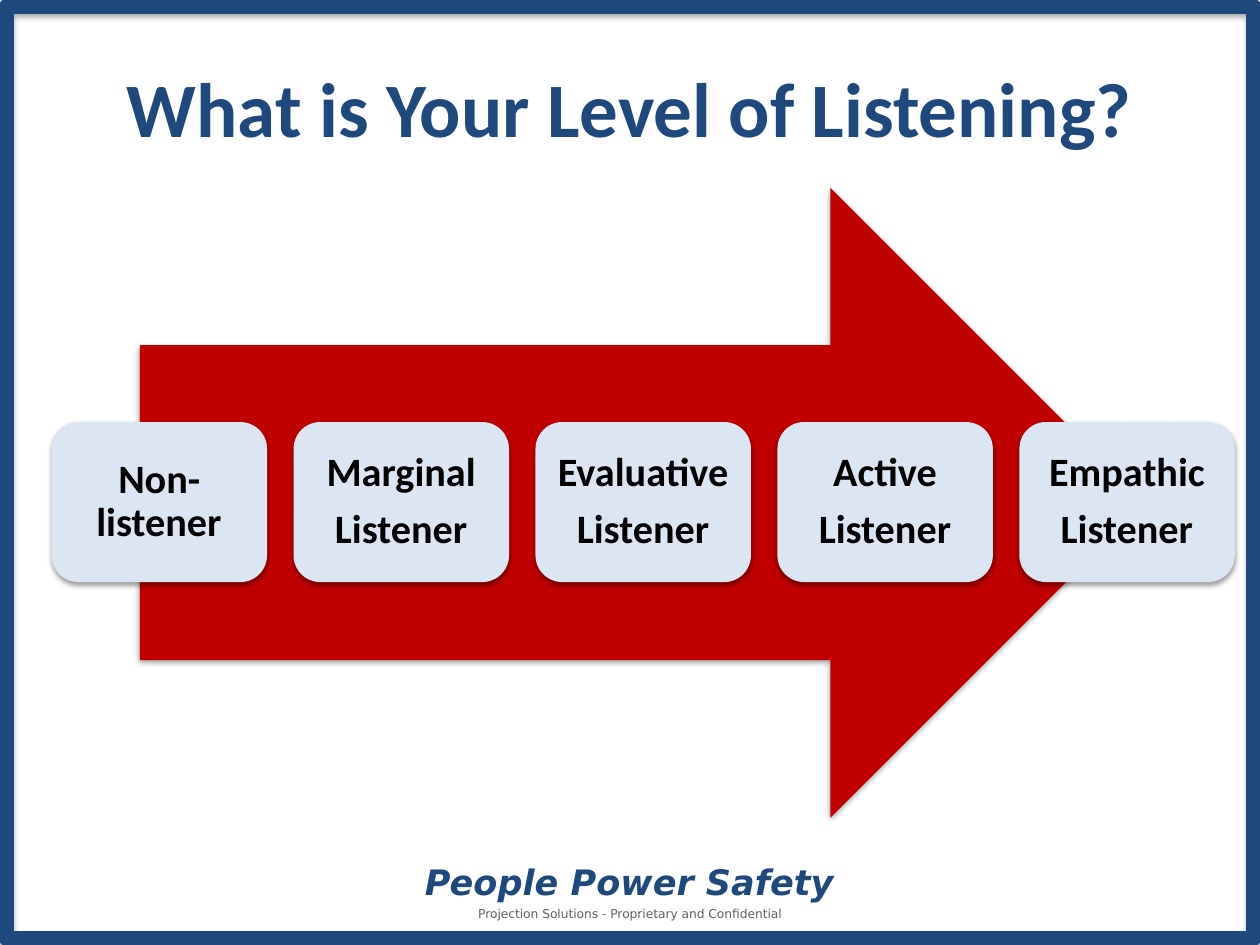
import dataclasses

import lxml.etree
import pptx
import pptx.dml.color
import pptx.enum.shapes
import pptx.enum.text
import pptx.oxml.ns
import pptx.util
from pptx.util import Inches

NAVY, RED, PALE, GREY, BLACK = "1F497D", "C00000", "DCE6F2", "606060", "000000"
SHAPE = pptx.enum.shapes.MSO_SHAPE


@dataclasses.dataclass
class Box:
    left: float
    top: float
    width: float
    height: float

    def lengths(self) -> list:
        return [Inches(n) for n in (self.left, self.top, self.width, self.height)]


@dataclasses.dataclass
class Shadow:
    opacity: int
    distance: float
    blur: float = 3.1


def set_color(target, value: str) -> None:
    """Colour a font, or a fill that is already solid."""
    color = target.fore_color if hasattr(target, "fore_color") else target.color
    color.rgb = pptx.dml.color.RGBColor.from_string(value)


def add_shadow(shape, shadow: Shadow) -> None:
    """Cast a soft shadow straight down."""
    shape.shadow.inherit = False
    effects = shape._element.spPr.find(pptx.oxml.ns.qn("a:effectLst"))
    outer = lxml.etree.SubElement(
        effects, pptx.oxml.ns.qn("a:outerShdw"),
        blurRad=str(pptx.util.Pt(shadow.blur)), dist=str(pptx.util.Pt(shadow.distance)),
        dir="5400000", rotWithShape="0")
    color = lxml.etree.SubElement(outer, pptx.oxml.ns.qn("a:srgbClr"), val=BLACK)
    lxml.etree.SubElement(color, pptx.oxml.ns.qn("a:alpha"), val=str(shadow.opacity * 1000))


def add_panel(slide, kind, box: Box, shadow: Shadow, *, fill: str = "", line: str = "",
              line_width: float = 0):
    panel = slide.shapes.add_shape(kind, *box.lengths())
    if fill:
        panel.fill.solid()
        set_color(panel.fill, fill)
    else:
        panel.fill.background()
    if line:
        set_color(panel.line, line)
        panel.line.width = pptx.util.Pt(line_width)
    else:
        panel.line.fill.background()
    add_shadow(panel, shadow)
    return panel


def write(shape, paragraphs: list[str], *, size: float, color: str, font: str = "Calibri",
          bold: bool = False, italic: bool = False, margin: float = 0,
          line_spacing: float = 1.0, space_after: float = 0) -> None:
    """Fill a shape with centred text."""
    frame = shape.text_frame
    frame.word_wrap = True
    frame.vertical_anchor = pptx.enum.text.MSO_ANCHOR.MIDDLE
    frame.margin_left = frame.margin_right = Inches(margin)
    frame.margin_top = frame.margin_bottom = Inches(margin)
    for index, words in enumerate(paragraphs):
        paragraph = frame.add_paragraph() if index else frame.paragraphs[0]
        paragraph.text = words
        paragraph.alignment = pptx.enum.text.PP_ALIGN.CENTER
        paragraph.line_spacing = line_spacing
        paragraph.space_after = pptx.util.Pt(space_after)
        for run in paragraph.runs:
            run.font.name = font
            run.font.size = pptx.util.Pt(size)
            run.font.bold = bold
            run.font.italic = italic
            set_color(run.font, color)


def main() -> None:
    deck = pptx.Presentation()
    deck.slide_width, deck.slide_height = Inches(10), Inches(7.5)
    slide = deck.slides.add_slide(deck.slide_layouts[6])

    # Frame and footer
    add_panel(slide, SHAPE.RECTANGLE, Box(0.05, 0.05, 9.9, 7.4), Shadow(35, 1.8),
              line=NAVY, line_width=8.75)
    confidentiality = slide.shapes.add_textbox(*Box(3.31, 7.14, 3.38, 0.22).lengths())
    write(confidentiality, ["Projection Solutions - Proprietary and Confidential"],
          size=7, color=GREY, font="DejaVu Sans")
    motto = slide.shapes.add_textbox(*Box(3.24, 6.86, 3.51, 0.27).lengths())
    write(motto, ["People Power Safety"], size=20, color=NAVY, font="DejaVu Sans",
          bold=True, italic=True)

    # Title
    title = slide.shapes.add_textbox(*Box(0, 0.42, 10, 0.86).lengths())
    write(title, ["What is Your Level of Listening?"], size=44, color=NAVY, bold=True)

    # Arrow with the five listening levels across it
    level_shadow = Shadow(38, 1.6)
    add_panel(slide, SHAPE.RIGHT_ARROW, Box(1.11, 1.49, 7.98, 5), level_shadow, fill=RED)
    levels = [["Non-\vlistener\t"]] + [
        [kind, "Listener"] for kind in ("Marginal", "Evaluative", "Active", "Empathic")]
    for index, words in enumerate(levels):
        level = add_panel(slide, SHAPE.ROUNDED_RECTANGLE,
                          Box(0.41 + 1.92 * index, 3.35, 1.71, 1.27), level_shadow, fill=PALE)
        write(level, words, size=23, color=BLACK, bold=True, margin=0.1,
              line_spacing=0.9, space_after=8)

    deck.save("out.pptx")


if __name__ == "__main__":
    main()
